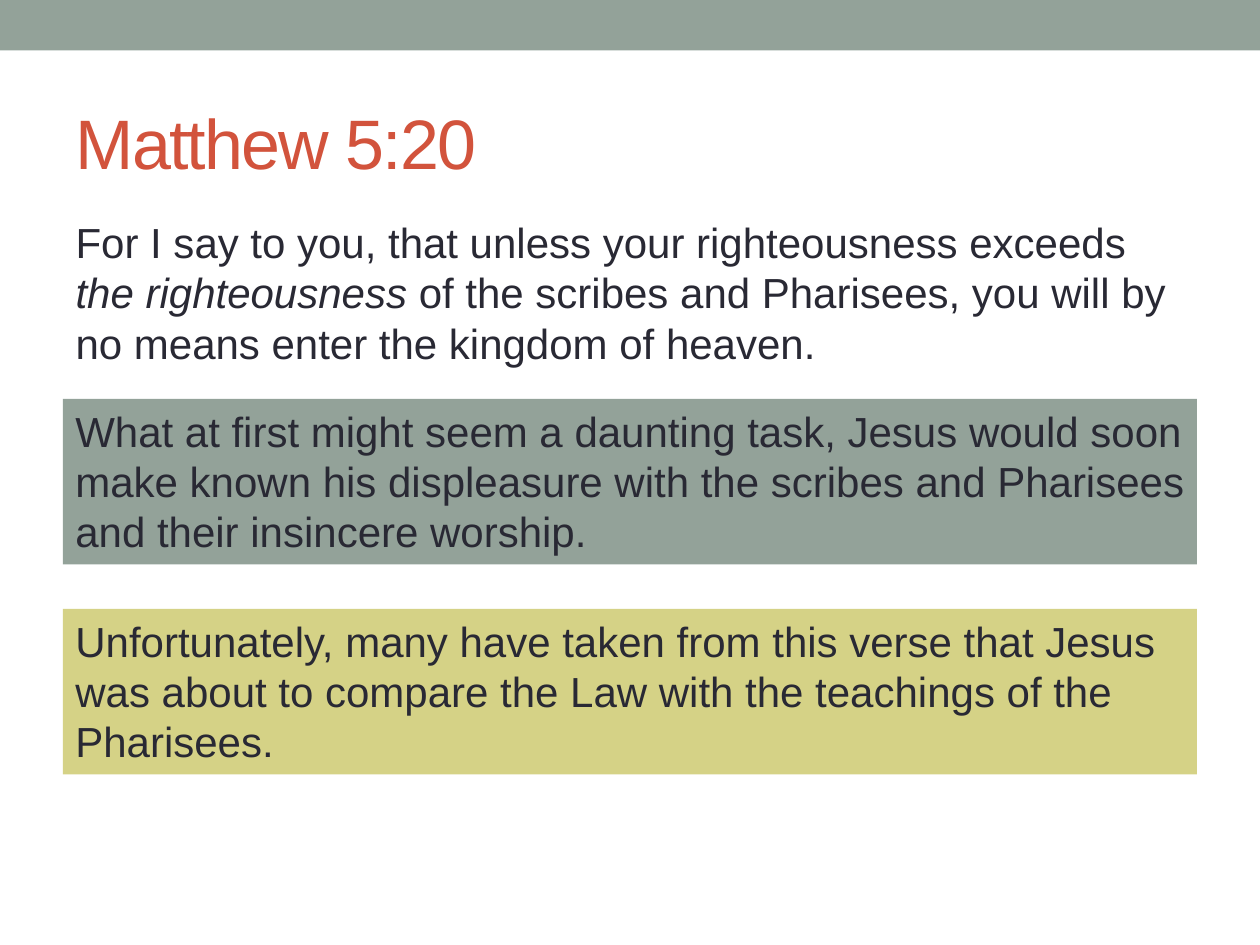
from pptx import Presentation
from pptx.dml.color import RGBColor
from pptx.enum.shapes import MSO_SHAPE as Preset
from pptx.enum.text import MSO_ANCHOR as Anchor, MSO_AUTO_SIZE as AutoSize, PP_ALIGN as Align
from pptx.oxml import parse_xml
from pptx.oxml.ns import nsdecls
from pptx.util import Pt

SAGE = "93A299"
OLIVE = "D5D286"
RED = "D2533C"
INK = "292934"
LEFT, WIDTH = 36, 648
PANEL_HEIGHT = 94.5

TITLE_FORMAT = {"name": "Arial", "size": Pt(40)}
TEXT_FORMAT = {"name": "Arial", "size": Pt(24)}

VERSE = [
    ("For I say to you, that unless your righteousness exceeds ", False),
    ("the righteousness", True),
    (" of the scribes and Pharisees, you will by no means enter the kingdom of heaven.", False),
]
PANELS = [
    (348, OLIVE, "Unfortunately, many have taken from this verse that Jesus was about to "
     "compare the Law with the teachings of the Pharisees."),
    (228, SAGE, "What at first might seem a daunting task, Jesus would soon make known his "
     "displeasure with the scribes and Pharisees and their insincere worship."),
]


def color(value):
    return RGBColor.from_string(value)


def apply(target, values):
    for name, value in values.items():
        setattr(target, name, value)


def place(shape, left, top, width, height):
    apply(shape, {"left": Pt(left), "top": Pt(top), "width": Pt(width), "height": Pt(height)})


def add_run(paragraph, text, values, ink):
    run = paragraph.add_run()
    run.text = text
    apply(run.font, values)
    run.font.color.rgb = color(ink)
    return run


def add_rectangle(slide, left, top, width, height, fill):
    shape = slide.shapes.add_shape(Preset.RECTANGLE, Pt(left), Pt(top), Pt(width), Pt(height))
    shape.shadow.inherit = False
    shape.fill.solid()
    shape.fill.fore_color.rgb = color(fill)
    shape.line.fill.background()
    return shape


def fill_title(slide, text):
    title = slide.shapes.title
    place(title, LEFT, 42, WIDTH, 78)
    apply(title.text_frame, {"vertical_anchor": Anchor.MIDDLE, "auto_size": AutoSize.NONE})
    paragraph = title.text_frame.paragraphs[0]
    paragraph.alignment = Align.LEFT
    run = add_run(paragraph, text, TITLE_FORMAT, RED)
    run.font._element.set("spc", "-100")


def fill_verse(slide, runs):
    body = slide.placeholders[1]
    place(body, LEFT, 120, WIDTH, 117)
    body.text_frame.auto_size = AutoSize.NONE
    paragraph = body.text_frame.paragraphs[0]
    properties = paragraph._p.get_or_add_pPr()
    properties.set("marL", "0")
    properties.set("indent", "0")
    properties.append(parse_xml(f"<a:buNone {nsdecls('a')}/>"))
    for text, italic in runs:
        add_run(paragraph, text, {**TEXT_FORMAT, "italic": italic}, INK)


def add_panel(slide, top, fill, text):
    panel = add_rectangle(slide, LEFT, top, WIDTH, PANEL_HEIGHT, fill)
    apply(panel.text_frame, {"word_wrap": True, "vertical_anchor": Anchor.TOP,
                             "auto_size": AutoSize.SHAPE_TO_FIT_TEXT})
    paragraph = panel.text_frame.paragraphs[0]
    paragraph.alignment = Align.LEFT
    add_run(paragraph, text, TEXT_FORMAT, INK)


def main():
    presentation = Presentation()
    apply(presentation, {"slide_width": Pt(720), "slide_height": Pt(540)})
    slide = presentation.slides.add_slide(presentation.slide_layouts[1])
    add_rectangle(slide, 0, 0, 720, 28.8, SAGE)
    fill_title(slide, "Matthew 5:20")
    fill_verse(slide, VERSE)
    for panel in PANELS:
        add_panel(slide, *panel)
    presentation.save("out.pptx")


if __name__ == "__main__":
    main()
